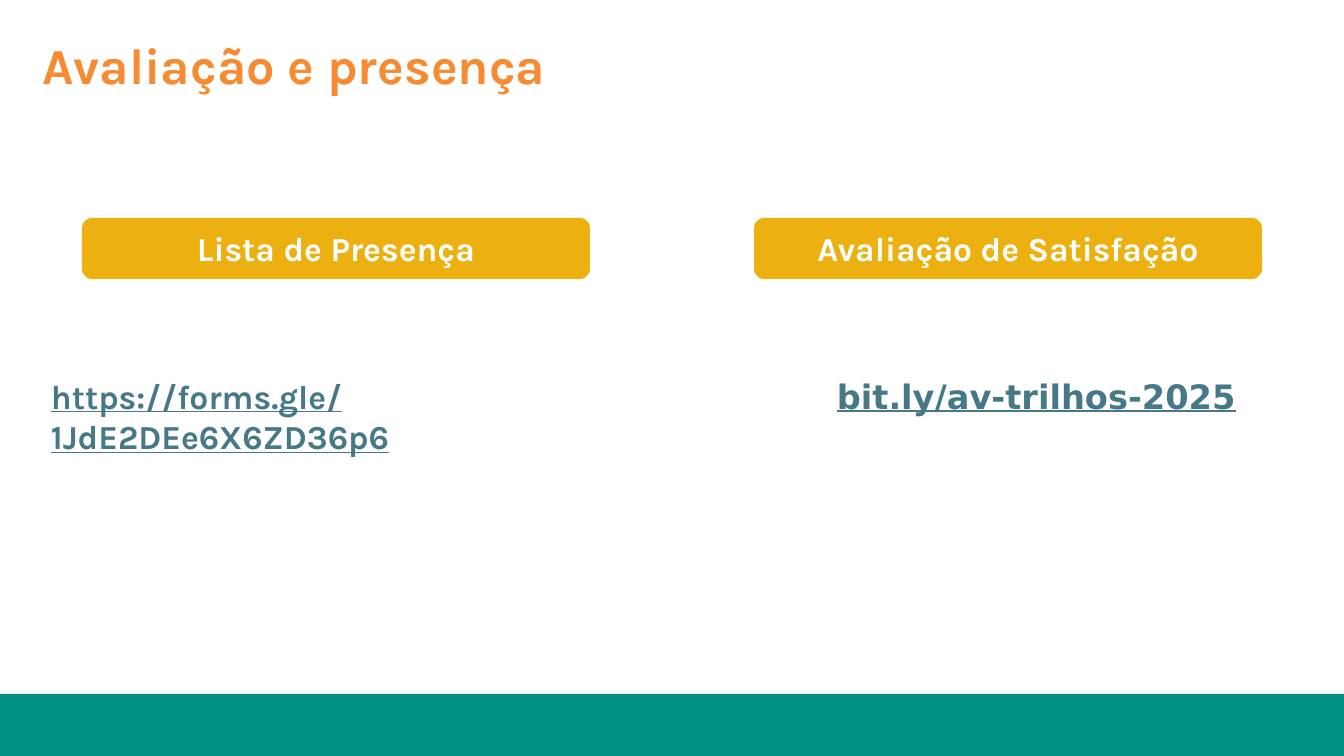
"""Build the slide with the attendance and evaluation links."""
from pptx import Presentation
from pptx.dml.color import RGBColor as Rgb
from pptx.enum.shapes import MSO_SHAPE as Shape
from pptx.enum.text import MSO_ANCHOR as Anchor, PP_ALIGN as Align
from pptx.util import Pt

COLORS = {"title": "F68B32", "pill": "ECB111", "label": "FFFFFF",
          "link": "467886", "foot": "009182"}
FONT = "Karla"
WIDTH, HEIGHT = 1344, 756
FOOT = 62
TITLE = ("Avaliação e presença", (33, 35, 1229, 65))
PILLS = [("Lista de Presença", 82), ("Avaliação de Satisfação", 754)]
LINKS = [("https://forms.gle/1JdE2DEe6X6ZD36p6", 41, 581, FONT),
         ("bit.ly/av-trilhos-2025", 827, 435, "DejaVu Sans")]
SCALE = 914400 / 100.8


def emu(*sizes):
    return [round(size * SCALE) for size in sizes]


def write(shape, text, color, size=24, font=FONT):
    frame = shape.text_frame
    frame.word_wrap = True
    para = frame.paragraphs[0]
    para.text = text
    para.font.name = font
    para.font.size = Pt(size)
    para.font.bold = True
    para.font.color.rgb = Rgb.from_string(COLORS[color])
    return para


def block(slide, kind, box, color):
    shape = slide.shapes.add_shape(kind, *emu(*box))
    shape.shadow.inherit = False
    shape.fill.solid()
    shape.fill.fore_color.rgb = Rgb.from_string(COLORS[color])
    shape.line.fill.background()
    return shape


def main():
    deck = Presentation()
    deck.slide_width, deck.slide_height = emu(WIDTH, HEIGHT)
    slide = deck.slides.add_slide(deck.slide_layouts[6])
    block(slide, Shape.RECTANGLE, (0, HEIGHT - FOOT, WIDTH, FOOT), "foot")

    text, box = TITLE
    para = write(slide.shapes.add_textbox(*emu(*box)), text, "title", 36)
    para.line_spacing = Pt(39)

    for text, left in PILLS:
        pill = block(slide, Shape.ROUNDED_RECTANGLE, (left, 218, 508, 61), "pill")
        pill.text_frame.vertical_anchor = Anchor.MIDDLE
        write(pill, text, "label").alignment = Align.CENTER

    for text, left, width, font in LINKS:
        area = slide.shapes.add_textbox(*emu(left, 371, width, 92))
        write(area, text, "link", font=font).font.underline = True

    deck.save("out.pptx")


if __name__ == "__main__":
    main()
